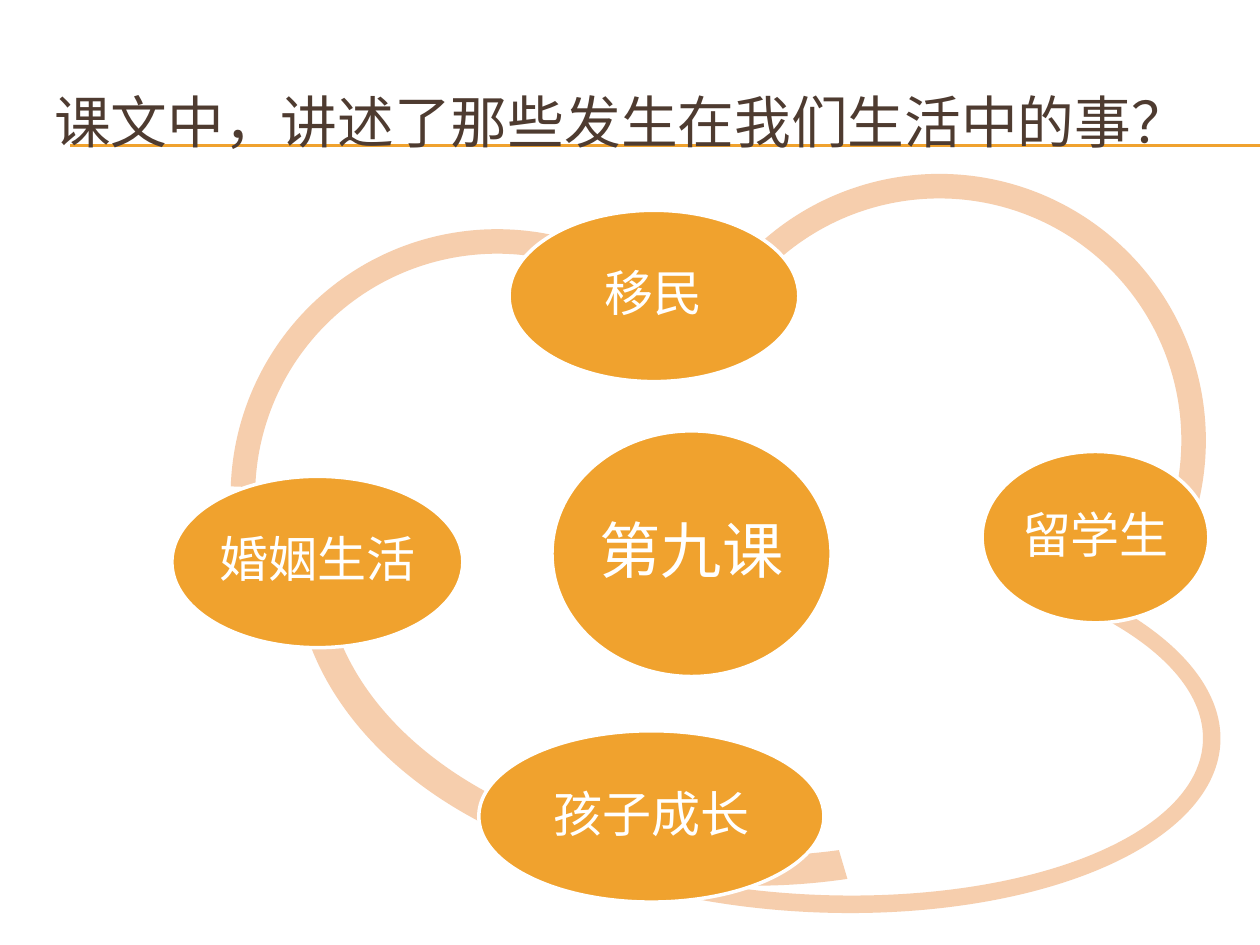
from pptx import Presentation
from pptx.dml.color import RGBColor
from pptx.enum.shapes import MSO_CONNECTOR, MSO_SHAPE
from pptx.enum.text import MSO_ANCHOR, PP_ALIGN
from pptx.oxml.ns import qn
from pptx.util import Pt
from lxml import etree

ORANGE = RGBColor(0xF0, 0xA2, 0x2E)
PEACH = RGBColor(0xF6, 0xCE, 0xAD)
BROWN = RGBColor(0x4E, 0x3B, 0x30)
WHITE = RGBColor(0xFF, 0xFF, 0xFF)
FONT = "Lato"


def write(shape, text, size, color, inset):
    frame = shape.text_frame
    frame.text = text
    frame.word_wrap = True
    frame.vertical_anchor = MSO_ANCHOR.MIDDLE
    frame.margin_left = frame.margin_right = Pt(inset)
    frame.margin_top = frame.margin_bottom = Pt(inset)
    font = frame.paragraphs[0].runs[0].font
    font.name, font.size, font.color.rgb = FONT, Pt(size), color
    return frame.paragraphs[0]


deck = Presentation()
deck.slide_width, deck.slide_height = Pt(720), Pt(540)
page = deck.slides.add_slide(deck.slide_layouts[6])

# Double rule under the title
for y in (82.8, 83.5):
    rule = page.shapes.add_connector(
        MSO_CONNECTOR.STRAIGHT, Pt(40.3), Pt(y), Pt(720), Pt(y))
    rule.line.color.rgb = ORANGE
    rule.line.width = Pt(0.75)
    etree.SubElement(rule._element.spPr, qn("a:effectLst"))

# Title
title = page.shapes.add_textbox(Pt(23.8), Pt(36), Pt(684), Pt(66.2))
write(title, "课文中，讲述了那些发生在我们生活中的事？", 32.4, BROWN, 7.2)

# Arcs linking the topics: left, top, width, height, start, end, rotation
arcs = [
    (131.8, 131, 304.6, 304.6, 182, 290, 0),
    (168.5, 136.1, 524.2, 370.1, 73.5, 175, 0),
    (234, 303.8, 463.7, 217.4, 334, 127, 3),
    (384.5, 99.4, 304.6, 304.6, 222, 18, 0),
]
for left, top, width, height, start, end, rotation in arcs:
    arc = page.shapes.add_shape(
        MSO_SHAPE.BLOCK_ARC, Pt(left), Pt(top), Pt(width), Pt(height))
    # Angles are stored in 1/60000 degree, adjustments in 1/100000
    arc.adjustments[0] = start * 0.6
    arc.adjustments[1] = end * 0.6
    arc.adjustments[2] = 0.046
    arc.rotation = rotation
    arc.shadow.inherit = False
    arc.fill.solid()
    arc.fill.fore_color.rgb = PEACH
    arc.line.fill.background()

# Lesson in the centre and its four topics: left, top, width, height, size
topics = [
    ("第九课", 315.4, 246.2, 159.5, 140.4, 35),
    ("移民", 290.9, 120.2, 165.6, 97.9, 28),
    ("留学生", 561.2, 258, 129.6, 97.9, 28),
    ("孩子成长", 273.6, 417.6, 197.3, 97.9, 28),
    ("婚姻生活", 98.2, 272.2, 166.3, 97.9, 28),
]
for name, left, top, width, height, size in topics:
    topic = page.shapes.add_shape(
        MSO_SHAPE.OVAL, Pt(left), Pt(top), Pt(width), Pt(height))
    topic.shadow.inherit = False
    topic.fill.solid()
    topic.fill.fore_color.rgb = ORANGE
    topic.line.color.rgb = WHITE
    topic.line.width = Pt(2)
    para = write(topic, name, size, WHITE, size / 10)
    para.alignment = PP_ALIGN.CENTER
    para.line_spacing = 0.9

deck.save("out.pptx")
